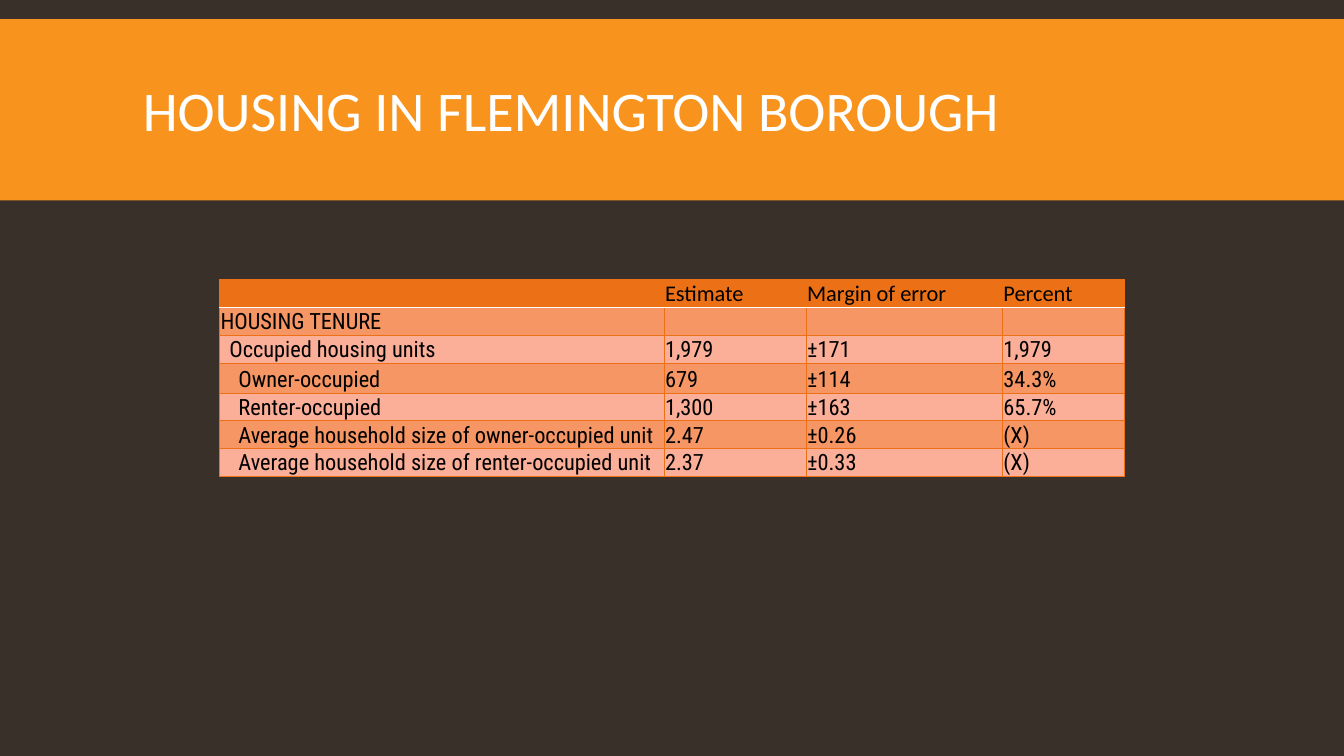
from lxml import etree
from pptx import Presentation
from pptx.dml.color import RGBColor
from pptx.enum.shapes import MSO_SHAPE
from pptx.enum.text import MSO_ANCHOR
from pptx.oxml.ns import qn
from pptx.util import Cm, Pt

TITLE = "HOUSING IN FLEMINGTON BOROUGH"
HEADINGS = ("", "Estimate", "Margin of error", "Percent")
# Indent level of the label, then the cells of the row
TENURE_ROWS = [
    (0, ("HOUSING TENURE", "", "", "")),
    (1, ("Occupied housing units", "1,979", "±171", "1,979")),
    (2, ("Owner-occupied", "679", "±114", "34.3%")),
    (2, ("Renter-occupied", "1,300", "±163", "65.7%")),
    (2, ("Average household size of owner-occupied unit", "2.47", "±0.26", "(X)")),
    (2, ("Average household size of renter-occupied unit", "2.37", "±0.33", "(X)")),
]
COLUMN_WIDTHS = (11.2, 3.58, 4.95, 3.07)
ROW_HEIGHTS = (0.71, 0.68, 0.68, 0.76, 0.68, 0.68, 0.68)
LABEL_INSETS = (0.02, 0.24, 0.47)

BROWN = RGBColor(0x39, 0x30, 0x2A)
AMBER = RGBColor(0xF8, 0x93, 0x1D)
ORANGE = RGBColor(0xEC, 0x70, 0x16)
DARK_BAND = RGBColor(0xF6, 0x96, 0x64)
LIGHT_BAND = RGBColor(0xFB, 0xAE, 0x98)
WHITE = RGBColor(0xFF, 0xFF, 0xFF)
BLACK = RGBColor(0, 0, 0)
HEADING_FONT, BODY_FONT = "Calibri", "Roboto Condensed"
TEXT_SIZE = Pt(16)
RECTANGLE = MSO_SHAPE.RECTANGLE
MIDDLE, BOTTOM = MSO_ANCHOR.MIDDLE, MSO_ANCHOR.BOTTOM


def add_span(para, text, font_name, size, color):
    span = para.add_run()
    span.text = text
    span.font.name = font_name
    span.font.size = size
    span.font.color.rgb = color


def set_border(cell, side, color, width):
    """Draw one side (L, R, T or B); borders must be set before the fill."""
    line = etree.SubElement(cell._tc.get_or_add_tcPr(), qn(f"a:ln{side}"), w=str(width))
    solid = etree.SubElement(line, qn("a:solidFill"))
    etree.SubElement(solid, qn("a:srgbClr"), val=str(color))


def style_cell(cell, row, text, inset):
    for side in "LRTB":
        under_heading = (row, side) in ((0, "B"), (1, "T"))
        set_border(cell, side, WHITE if under_heading else ORANGE,
                   Pt(1) if under_heading else Pt(0.75))
    cell.fill.solid()
    cell.fill.fore_color.rgb = ORANGE if row == 0 else DARK_BAND if row % 2 else LIGHT_BAND
    cell.vertical_anchor = BOTTOM
    cell.margin_left = Cm(inset)
    cell.margin_top = cell.margin_right = Cm(0.02)
    cell.margin_bottom = 0
    para = cell.text_frame.paragraphs[0]
    if text:
        add_span(para, text, BODY_FONT if row else HEADING_FONT, TEXT_SIZE, BLACK)
    else:  # keeps an empty cell from stretching its row
        etree.SubElement(para._p, qn("a:endParaRPr"), sz=str(int(TEXT_SIZE.pt * 100)))


def add_title(page):
    band = page.shapes.add_shape(RECTANGLE, 0, Cm(0.48), Cm(33.87), Cm(4.57))
    band.shadow.inherit = False
    band.fill.solid()
    band.fill.fore_color.rgb = AMBER
    band.line.fill.background()
    box = page.shapes.add_textbox(Cm(3.35), Cm(0.79), Cm(27.18), Cm(4.19))
    frame = box.text_frame
    frame.word_wrap = True
    frame.vertical_anchor = MIDDLE
    para = frame.paragraphs[0]
    para.line_spacing = 0.85
    add_span(para, TITLE, HEADING_FONT, Pt(40), WHITE)


def add_tenure_table(page):
    rows = [(0, HEADINGS)] + TENURE_ROWS
    table = page.shapes.add_table(
        len(rows), len(HEADINGS), Cm(5.54), Cm(7.04),
        Cm(sum(COLUMN_WIDTHS)), Cm(sum(ROW_HEIGHTS))).table
    for column, width in zip(table.columns, COLUMN_WIDTHS):
        column.width = Cm(width)
    for row, (level, texts) in enumerate(rows):
        table.rows[row].height = Cm(ROW_HEIGHTS[row])
        for column, text in enumerate(texts):
            inset = LABEL_INSETS[0 if column else level]
            style_cell(table.cell(row, column), row, text, inset)


def main():
    deck = Presentation()
    deck.slide_width, deck.slide_height = Cm(33.87), Cm(19.05)
    page = deck.slides.add_slide(deck.slide_layouts[6])
    page.background.fill.solid()
    page.background.fill.fore_color.rgb = BROWN
    add_title(page)
    add_tenure_table(page)
    deck.save("out.pptx")


if __name__ == "__main__":
    main()
